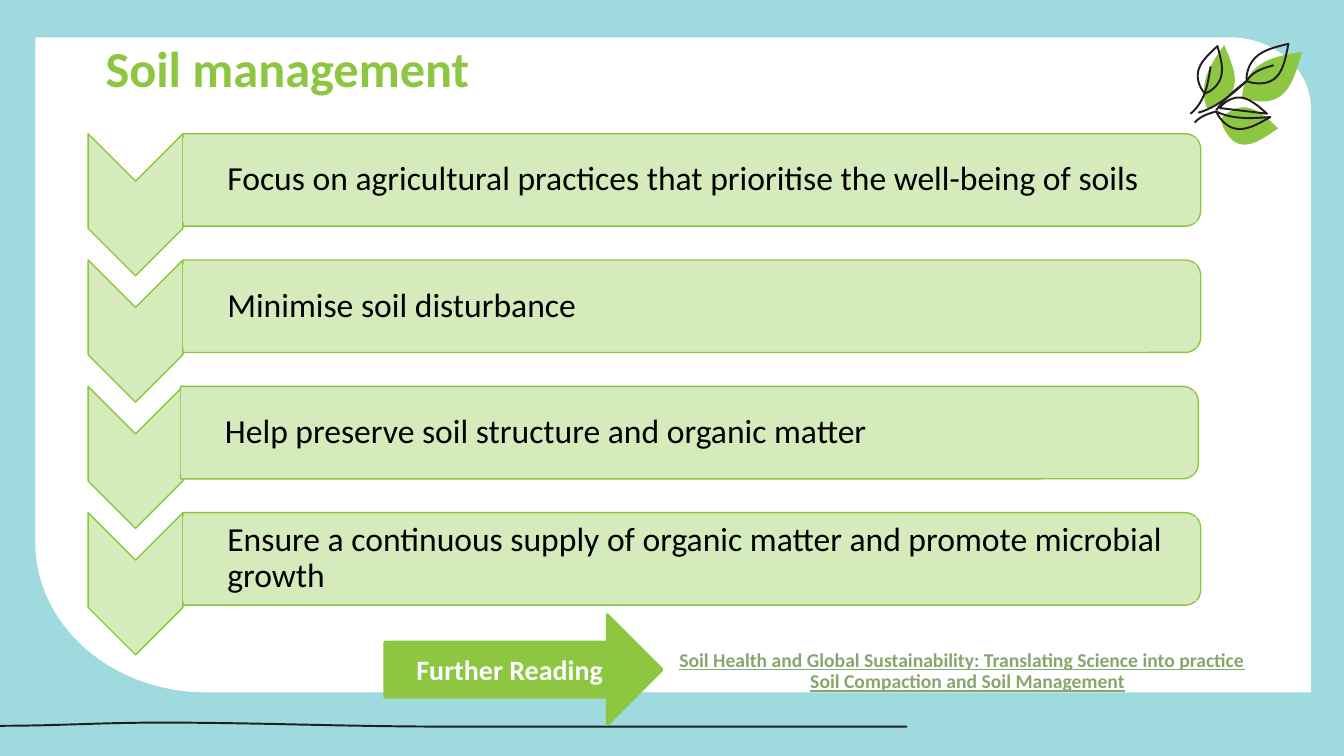
from dataclasses import dataclass
from math import cos, pi, radians, sin

from pptx import Presentation
from pptx import util as u
from pptx.dml.color import RGBColor
from pptx.enum import shapes, text


@dataclass(frozen=True)
class Theme:
    font: str = "Calibri"
    sky: str = "9FDADF"
    white: str = "FFFFFF"
    black: str = "000000"
    ink: str = "231F20"
    green: str = "8DC641"
    pale: str = "D6EBBB"
    link: str = "87A66E"
    title_size: int = 36
    body_size: int = 24
    arrow_size: int = 20
    link_size: int = 14
    ink_width: float = 1.4


THEME = Theme()
SHAPE = shapes.MSO_SHAPE
PRACTICES = [
    "Focus on agricultural practices that prioritise the well-being of soils",
    "Minimise soil disturbance",
    "Help preserve soil structure and organic matter",
    "Ensure a continuous supply of organic matter and promote microbial growth",
]
READINGS = [  # text, left margin in cm
    ("Soil Health and Global Sustainability: Translating Science into practice", 0.64),
    ("Soil Compaction and Soil Management", 3.94),
]
# Leaves: base, tip (as shares of the emblem width), bulge on the left and the right.
FILLED_LEAVES = [
    ((0.16, 0.6), (0.31, 0.04), 0.14, 0.31),
    ((0.47, 0.5), (1, 0.1), 0.2, 0.3),
    ((0.28, 0.7), (0.79, 0.78), 0.27, 0.37),
]
DRAWN_LEAVES = [
    ((0.14, 0.47), (0.25, 0.05), 0.25, 0.23),
    ((0.51, 0.36), (0.88, 0.03), 0.21, 0.3),
    ((0.27, 0.6), (0.69, 0.65), 0.27, 0),
    ((0.24, 0.63), (0.72, 0.68), -0.07, 0.28),
]
STEMS = [  # base, tip, bulge on the left
    ((0.08, 0.64), (0.51, 0.36), -0.06),
    ((0.24, 0.62), (0.51, 0.36), 0.04),
    ((0.01, 0.65), (0.19, 0.23), -0.1),
    ((0.51, 0.36), (0.75, 0.22), 0.1),
    ((0.05, 0.73), (0.24, 0.63), 0.08),
]


def set_all(target, formats):
    for name, value in formats.items():
        setattr(target, name, value)


def paint(shape, fill=None, line=None, width=1):
    shape.shadow.inherit = False
    for part, color in ((shape.fill, fill), (shape.line.fill, line)):
        if color:
            part.solid()
            part.fore_color.rgb = RGBColor.from_string(color)
        else:
            part.background()
    if line:
        shape.line.width = u.Pt(width)


def add_block(slide, kind, box, **colors):
    shape = slide.shapes.add_shape(kind, *map(u.Cm, box))
    paint(shape, **colors)
    return shape


def add_turned_block(slide, kind, box, **colors):
    """Add a shape turned a quarter clockwise that fills the box as seen."""
    left, top, width, height = box
    shift = (width - height) / 2
    shape = add_block(slide, kind, (left + shift, top - shift, height, width), **colors)
    shape.rotation = 90
    return shape


def add_outline(slide, box, points, scale=1, **colors):
    """Join points, measured from the box corner in units of scale cm."""
    points = [(u.Cm(box[0] + x * scale), u.Cm(box[1] + y * scale)) for x, y in points]
    builder = slide.shapes.build_freeform(*points[0])
    builder.add_line_segments(points[1:], close="fill" in colors)
    paint(builder.convert_to_shape(), **colors)


def bowed_line(base, tip, bulge, steps=24):
    """Bow a line to its left by a share of its length, fullest near the base."""
    (x, y), (dx, dy) = base, (tip[0] - base[0], tip[1] - base[1])
    points = []
    for step in range(steps + 1):
        t = step / steps
        bow = bulge * sin(pi * t ** 0.8)
        points.append((x + t * dx + bow * dy, y + t * dy - bow * dx))
    return points


def leaf_outline(base, tip, left_bulge, right_bulge):
    return bowed_line(base, tip, left_bulge) + bowed_line(base, tip, -right_bulge)[::-1]


def rounded_corner(center, radii, start):
    """Return a clockwise quarter turn from the start angle in degrees."""
    angles = [radians(start + step) for step in range(0, 91, 3)]
    return [(center[0] + radii[0] * cos(a), center[1] + radii[1] * sin(a)) for a in angles]


def eased_line(stops, steps=16):
    """Glide between stops without kinks."""
    points = [stops[0]]
    for (x0, y0), (x1, y1) in zip(stops, stops[1:]):
        for step in range(1, steps + 1):
            t = step / steps
            points.append((x0 + t * (x1 - x0), y0 + (y1 - y0) * (1 - cos(pi * t)) / 2))
    return points


def write(shape, lines, size, color, margins=(0.25, 0.13, 0.25, 0.13), indents=(0,),
          anchor="MIDDLE", align="LEFT", spacing=0.9, **font):
    frame = shape.text_frame
    sides = ("margin_left", "margin_top", "margin_right", "margin_bottom")
    set_all(frame, dict(zip(sides, map(u.Cm, margins)), word_wrap=True,
                        vertical_anchor=text.MSO_ANCHOR[anchor]))
    for number, (line, indent) in enumerate(zip(lines, indents)):
        paragraph = frame.add_paragraph() if number else frame.paragraphs[0]
        set_all(paragraph, {"alignment": text.PP_ALIGN[align], "line_spacing": spacing})
        if indent:
            paragraph._p.get_or_add_pPr().set("marL", str(u.Cm(indent)))
        run = paragraph.add_run()
        run.text = line
        set_all(run.font, {"name": THEME.font, "size": u.Pt(size), **font})
        run.font.color.rgb = RGBColor.from_string(color)


def add_backdrop(slide, box):
    left, top, width, height = box
    add_block(slide, SHAPE.RECTANGLE, box, fill=THEME.sky)
    panel_width, panel_height = width - 1.72, height - 2.54
    right_radii, left_radii = (2.06, 1.8), (4.32, 3.78)
    panel = [
        (0, 0),
        *rounded_corner((panel_width - right_radii[0], right_radii[1]), right_radii, 270),
        (panel_width, panel_height),
        *rounded_corner((left_radii[0], panel_height - left_radii[1]), left_radii, 90),
    ]
    add_outline(slide, (left + 0.89, top + 0.94), panel, fill=THEME.white)
    ground = eased_line([(0, 0.08), (4, 0), (11.25, 0.1), (22.86, 0.1)])
    add_outline(slide, (left, top + 18.21), ground, line=THEME.ink, width=THEME.ink_width)


def add_emblem(slide, box):
    ink = {"scale": box[2], "line": THEME.ink, "width": THEME.ink_width}
    for leaf in FILLED_LEAVES:
        add_outline(slide, box, leaf_outline(*leaf), scale=box[2], fill=THEME.green)
    for leaf in DRAWN_LEAVES:
        add_outline(slide, box, leaf_outline(*leaf), **ink)
    for stem in STEMS:
        add_outline(slide, box, bowed_line(*stem), **ink)


def add_practices(slide, box):
    left, top, width, height = box
    arrow_width, arrow_height, bar_height = 2.39, 3.58, 2.33
    pitch = (height - arrow_height) / (len(PRACTICES) - 1)
    outline = {"fill": THEME.pale, "line": THEME.green}
    for row, practice in enumerate(PRACTICES):
        y = top + row * pitch
        add_turned_block(slide, SHAPE.CHEVRON, (left, y, arrow_width, arrow_height), **outline)
        x = left + arrow_width - (0.06 if row == 2 else 0)
        bar = add_turned_block(slide, SHAPE.ROUND_2_SAME_RECTANGLE,
                               (x, y, width - arrow_width, bar_height), **outline)
        bar.adjustments[0] = 0.167
        label = add_block(slide, SHAPE.RECTANGLE,
                          (x, y + 0.11, width - arrow_width - 0.11, 2.11), fill=THEME.pale)
        write(label, [practice], THEME.body_size, THEME.black,
              margins=(0.48, 0.05, 0.05, 0.05), indents=(0.64,))


def add_further_reading(slide, box):
    left, top, width, height = box
    links = slide.shapes.add_textbox(*map(u.Cm, (left + 6.3, top + 0.38, width - 6.3, 2.11)))
    lines, indents = zip(*READINGS)
    write(links, lines, THEME.link_size, THEME.link, margins=(0.48, 0.05, 0.05, 0.05),
          indents=indents, bold=True, underline=True)
    arrow = add_block(slide, SHAPE.RIGHT_ARROW, (left, top, 6.99, height),
                      fill=THEME.green, line=THEME.green, width=2)
    write(arrow, ["Further Reading"], THEME.arrow_size, THEME.white,
          align="CENTER", spacing=1.0, bold=True)


def main():
    presentation = Presentation()
    set_all(presentation, {"slide_width": u.Cm(33.87), "slide_height": u.Cm(19.05)})
    slide = presentation.slides.add_slide(presentation.slide_layouts[6])
    add_backdrop(slide, (0, 0, 33.87, 19.05))
    title = slide.shapes.add_textbox(*map(u.Cm, (2.41, 0.99, 29.44, 2.24)))
    write(title, ["Soil management"], THEME.title_size, THEME.green, anchor="TOP", bold=True)
    add_emblem(slide, (29.97, 1.02, 2.84, 2.79))
    add_practices(slide, (2.22, 3.37, 28.04, 13.13))
    add_further_reading(slide, (9.7, 15.49, 24.16, 2.77))
    presentation.save("out.pptx")


if __name__ == "__main__":
    main()
